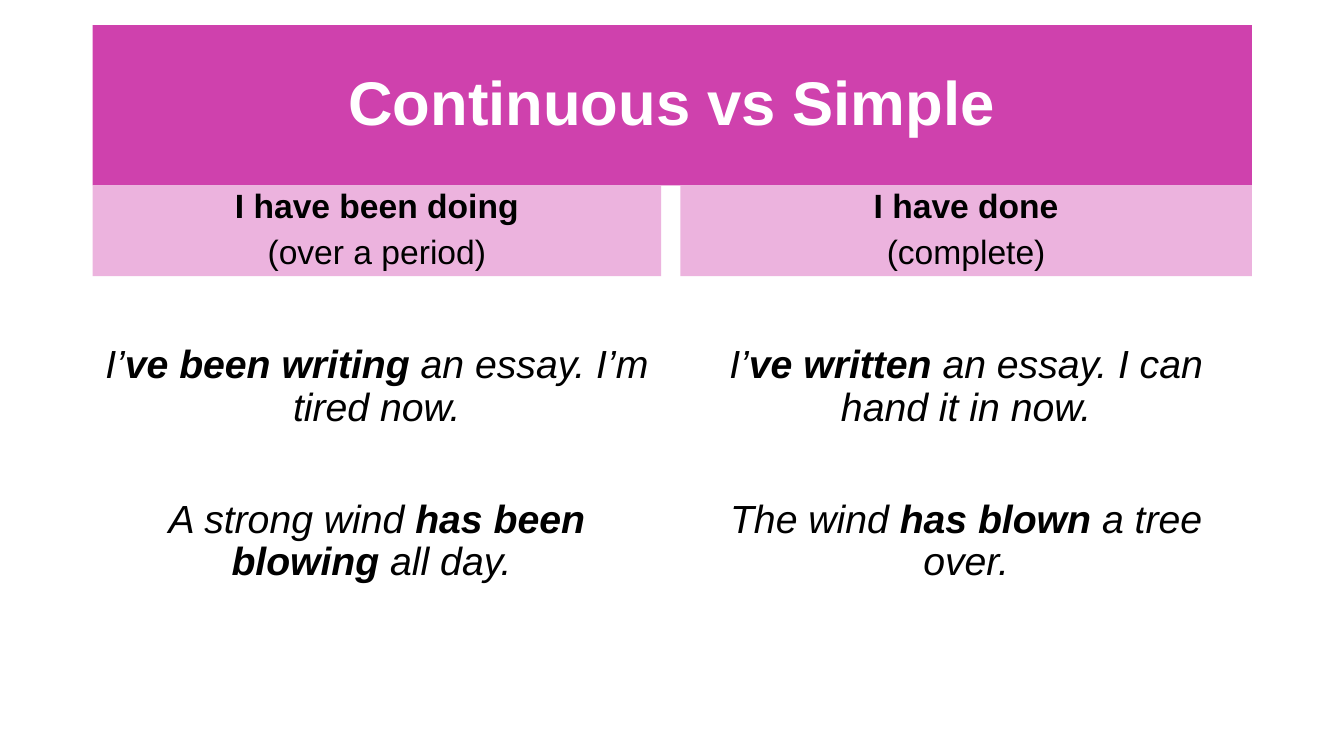
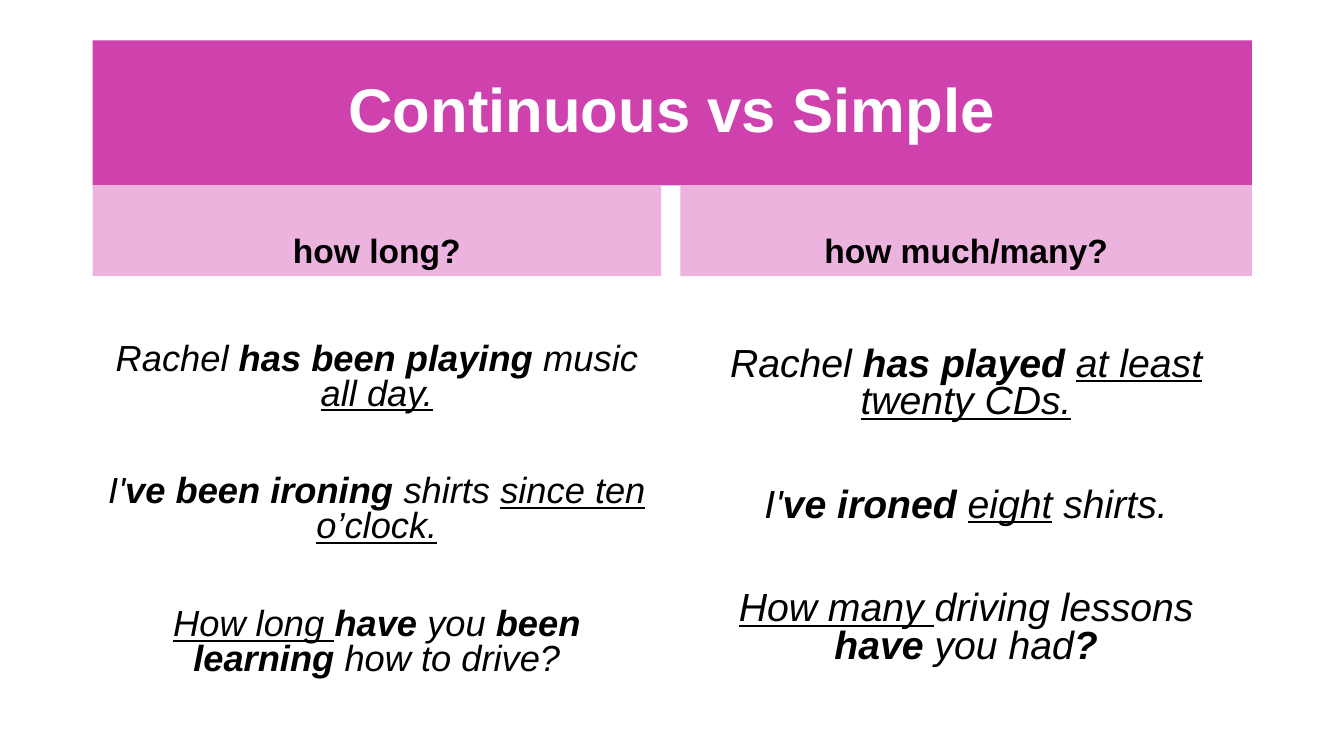
import pptx
import pptx.util
import pptx.dml.color
import pptx.enum.text
import pptx.oxml
import pptx.oxml.ns

Pt = pptx.util.Pt
FONT = "Arial"
MAGENTA, PINK, WHITE, BLACK = "CF41AD", "ECB3DE", "FFFFFF", "000000"
LEFT, WIDTH = 66.2, 828
HEADER_TOP, HEADER_HEIGHT, EXAMPLES_HEIGHT = 132.5, 64.8, 290
COLUMNS = ((LEFT, 406), (486, 408.2))
COMPARISON_LAYOUT = 4

# Each span is (text, style): b bold, i italic, u underlined.
PAGES = [
    {
        "title": "Continuous vs Simple", "title_top": 18,
        "header_spacing": 0.8, "line_spacing": 0.9,
        "columns": [
            {
                "header": [[("I have been doing", "b")], [("(over a period)", "")]],
                "size": 28, "inset": 49, "gap": 50,
                "examples": [
                    [("I’", "i"), ("ve been writing ", "bi"),
                     ("an essay. I’m tired now.", "i")],
                    [("A strong wind ", "i"), ("has been blowing ", "bi"),
                     ("all day. ", "i")],
                ],
            },
            {
                "header": [[("I have done", "b")], [("(complete)", "")]],
                "size": 28, "inset": 49, "gap": 50,
                "examples": [
                    [("I’", "i"), ("ve written ", "bi"),
                     ("an essay. I can hand it in now.", "i")],
                    [("The wind ", "i"), ("has blown ", "bi"), ("a tree over.", "i")],
                ],
            },
        ],
    },
    {
        "title": "Continuous vs Simple", "title_top": 28.8,
        "header_spacing": 0.9, "line_spacing": 0.8,
        "columns": [
            {
                "header": [[("how long?", "b")]],
                "size": 25.9, "inset": 48, "gap": 45,
                "examples": [
                    [("Rachel ", "i"), ("has been playing ", "bi"),
                     ("music ", "i"), ("all day.", "iu")],
                    [("I'", "i"), ("ve been ironing ", "bi"),
                     ("shirts ", "i"), ("since ten o’clock.", "iu")],
                    [("How long ", "iu"), ("have", "bi"), (" you ", "i"),
                     ("been learning ", "bi"), ("how to drive?", "i")],
                ],
            },
            {
                "header": [[("how much/many?", "b")]],
                "size": 28, "inset": 50.5, "gap": 47,
                "examples": [
                    [("Rachel ", "i"), ("has played ", "bi"),
                     ("at least twenty CDs.", "iu")],
                    [("I'", "i"), ("ve ironed ", "bi"), ("eight", "iu"),
                     (" shirts.", "i")],
                    [("How many ", "iu"), ("driving lessons ", "i"),
                     ("have", "bi"), (" you had", "i"), ("?", "bi")],
                ],
            },
        ],
    },
]


def color(value):
    return pptx.dml.color.RGBColor.from_string(value)


def place(box, left, top, width, height, anchor, fill=None):
    box.left, box.top, box.width, box.height = map(Pt, (left, top, width, height))
    if fill:
        box.fill.solid()
        box.fill.fore_color.rgb = color(fill)
    frame = box.text_frame
    frame.word_wrap = True
    frame.auto_size = pptx.enum.text.MSO_AUTO_SIZE.NONE
    frame.vertical_anchor = anchor


def remove_bullet(para):
    properties = para._p.get_or_add_pPr()
    properties.set("marL", "0")
    properties.set("indent", "0")
    properties.append(pptx.oxml.parse_xml(
        "<a:buNone %s/>" % pptx.oxml.ns.nsdecls("a")))


def write(box, paragraphs, size, line_spacing, gap=0, ink=BLACK):
    """Fill a box with centred paragraphs made of (text, style) spans."""
    frame = box.text_frame
    for number, spans in enumerate(paragraphs):
        para = frame.add_paragraph() if number else frame.paragraphs[0]
        remove_bullet(para)
        para.alignment = pptx.enum.text.PP_ALIGN.CENTER
        para.line_spacing = line_spacing
        para.space_before = Pt(gap if number else 0)
        para.space_after = Pt(0)
        for text, style in spans:
            span = para.add_run()
            span.text = text
            span.font.name = FONT
            span.font.size = Pt(size)
            span.font.color.rgb = color(ink)
            span.font.bold = "b" in style
            span.font.italic = "i" in style
            span.font.underline = "u" in style


def add_title(box, text, top):
    place(box, LEFT, top, WIDTH, HEADER_TOP - top,
          pptx.enum.text.MSO_ANCHOR.MIDDLE, MAGENTA)
    write(box, [[(text, "b")]], 44, 0.9, ink=WHITE)


def add_column(header, examples, left, width, column, content):
    place(header, left, HEADER_TOP, width, HEADER_HEIGHT,
          pptx.enum.text.MSO_ANCHOR.BOTTOM, PINK)
    write(header, column["header"], 24, content["header_spacing"], gap=10)
    place(examples, left, HEADER_TOP + HEADER_HEIGHT, width, EXAMPLES_HEIGHT,
          pptx.enum.text.MSO_ANCHOR.TOP)
    examples.text_frame.margin_top = Pt(column["inset"])
    write(examples, column["examples"], column["size"],
          content["line_spacing"], column["gap"])


def add_comparison(deck, content):
    page = deck.slides.add_slide(deck.slide_layouts[COMPARISON_LAYOUT])
    title, *boxes = page.placeholders
    add_title(title, content["title"], content["title_top"])
    for header, examples, (left, width), column in zip(
            boxes[::2], boxes[1::2], COLUMNS, content["columns"]):
        add_column(header, examples, left, width, column, content)


def main():
    deck = pptx.Presentation()
    deck.slide_width, deck.slide_height = Pt(960), Pt(540)
    for content in PAGES:
        add_comparison(deck, content)
    deck.save("out.pptx")


if __name__ == "__main__":
    main()
